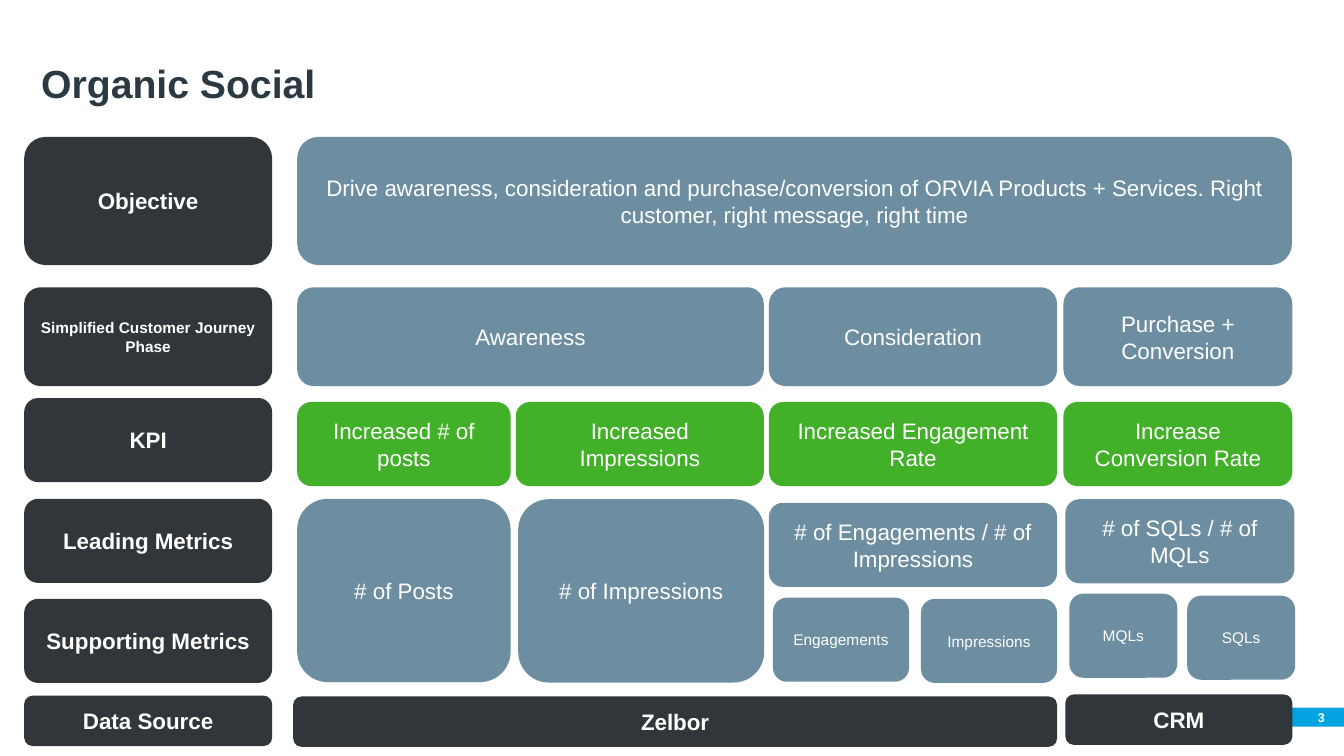
from dataclasses import dataclass

from pptx import Presentation
from pptx.dml.color import RGBColor
from pptx.enum.shapes import MSO_SHAPE as Preset
from pptx.enum.text import MSO_ANCHOR as Anchor, PP_ALIGN as Align
from pptx.util import Cm, Pt


@dataclass(frozen=True)
class Theme:
    """Colours, font and type sizes of the slide."""
    font: str = "Arial"
    white: str = "FFFFFF"
    title: str = "2B3A42"
    dark: str = "303639"
    steel: str = "6D8EA0"
    green: str = "43B02A"
    accent: str = "00A3E0"
    title_size: int = 28
    body_size: int = 16
    small_size: int = 11
    number_size: int = 9


THEME = Theme()
LABEL_LEFT, LABEL_WIDTH = 0.61, 6.25
POSTS, REACH, ENGAGE, CONVERT = 7.49, 13.0, 19.38, 26.8
POSTS_WIDTH, REACH_WIDTH, ENGAGE_WIDTH, CONVERT_WIDTH = 5.38, 6.25, 7.26, 5.77
ROW_HEIGHT, SOURCE_HEIGHT, TALL_HEIGHT = 2.12, 1.27, 4.62

LABELS = [
    ("Objective", 3.45, 3.23, THEME.body_size),
    ("Simplified Customer Journey Phase", 7.24, 2.49, THEME.small_size),
    ("KPI", 10.03, ROW_HEIGHT, THEME.body_size),
    ("Leading Metrics", 12.57, ROW_HEIGHT, THEME.body_size),
    ("Supporting Metrics", 15.09, ROW_HEIGHT, THEME.body_size),
    ("Data Source", 17.53, SOURCE_HEIGHT, THEME.body_size),
]
GOALS = [
    ("Drive awareness, consideration and purchase/conversion of ORVIA "
     "Products + Services. Right customer, right message, right time",
     POSTS, 3.45, 25.07, 3.23),
    ("Awareness", POSTS, 7.24, 11.76, 2.49),
    ("Consideration", ENGAGE, 7.24, ENGAGE_WIDTH, 2.49),
    ("Purchase + Conversion", CONVERT, 7.24, CONVERT_WIDTH, 2.49),
]
KPIS = [
    ("Increased # of posts", POSTS, POSTS_WIDTH),
    ("Increased Impressions", REACH, REACH_WIDTH),
    ("Increased Engagement Rate", ENGAGE, ENGAGE_WIDTH),
    ("Increase Conversion Rate", CONVERT, CONVERT_WIDTH),
]
LEADING = [
    ("# of Posts", POSTS, 12.57, POSTS_WIDTH, TALL_HEIGHT),
    ("# of Impressions", 13.06, 12.58, 6.2, TALL_HEIGHT),
    ("# of Engagements / # of Impressions", ENGAGE, 12.67, ENGAGE_WIDTH, ROW_HEIGHT),
    ("# of SQLs / # of MQLs", 26.85, 12.58, CONVERT_WIDTH, ROW_HEIGHT),
]
SUPPORTING = [
    ("Engagements", 19.48, 15.06, 3.43),
    ("Impressions", 23.21, 15.09, 3.43),
    ("MQLs", 26.95, 14.96, 2.72),
    ("SQLs", 29.92, 15.01, 2.72),
]
SOURCES = [
    ("Zelbor", 7.39, 17.55, 19.25),
    ("CRM", 26.85, 17.5, 5.72),
]


def write(shape, text, size, colour, bold=False, align=Align.CENTER, anchor=Anchor.MIDDLE):
    """Put one styled paragraph into a shape and return it."""
    frame = shape.text_frame
    frame.word_wrap = True
    frame.vertical_anchor = anchor
    para = frame.paragraphs[0]
    para.text = text
    para.alignment = align
    para.font.name = THEME.font
    para.font.size = Pt(size)
    para.font.bold = bold
    para.font.color.rgb = RGBColor.from_string(colour)
    return para


def add_block(page, preset, left, top, width, height, fill):
    """Add a plain filled shape without outline or shadow."""
    block = page.shapes.add_shape(preset, Cm(left), Cm(top), Cm(width), Cm(height))
    block.shadow.inherit = False
    block.fill.solid()
    block.fill.fore_color.rgb = RGBColor.from_string(fill)
    block.line.fill.background()
    return block


def add_card(page, text, left, top, width, height, fill=THEME.steel,
             size=THEME.body_size, bold=False):
    """Add a rounded card with centred white text."""
    card = add_block(page, Preset.ROUNDED_RECTANGLE, left, top, width, height, fill)
    write(card, text, size, THEME.white, bold)


def add_title(page, text):
    """Add the slide heading."""
    box = page.shapes.add_textbox(Cm(0.79), Cm(0.69), Cm(31.78), Cm(2.13))
    para = write(box, text, THEME.title_size, THEME.title, True, Align.LEFT, Anchor.BOTTOM)
    para.line_spacing = 0.9


def add_page_number(page, number):
    """Add the coloured page number tab at the right edge."""
    tab = add_block(page, Preset.RECTANGLE, 32.26, 17.83, 1.61, 0.48, THEME.accent)
    frame = tab.text_frame
    frame.margin_left = frame.margin_top = frame.margin_bottom = 0
    frame.margin_right = Cm(0.48)
    write(tab, number, THEME.number_size, THEME.white, True, Align.RIGHT)


def main():
    """Build the slide and save the deck."""
    deck = Presentation()
    deck.slide_width, deck.slide_height = Cm(33.87), Cm(19.05)
    page = deck.slides.add_slide(deck.slide_layouts[6])
    add_page_number(page, "3")
    add_title(page, "Organic Social")
    for text, top, height, size in LABELS:
        add_card(page, text, LABEL_LEFT, top, LABEL_WIDTH, height, THEME.dark, size, True)
    for card in GOALS + LEADING:
        add_card(page, *card)
    for text, left, width in KPIS:
        add_card(page, text, left, 10.13, width, ROW_HEIGHT, THEME.green)
    for card in SUPPORTING:
        add_card(page, *card, ROW_HEIGHT, size=THEME.small_size)
    for card in SOURCES:
        add_card(page, *card, SOURCE_HEIGHT, THEME.dark, bold=True)
    deck.save("out.pptx")


if __name__ == "__main__":
    main()
